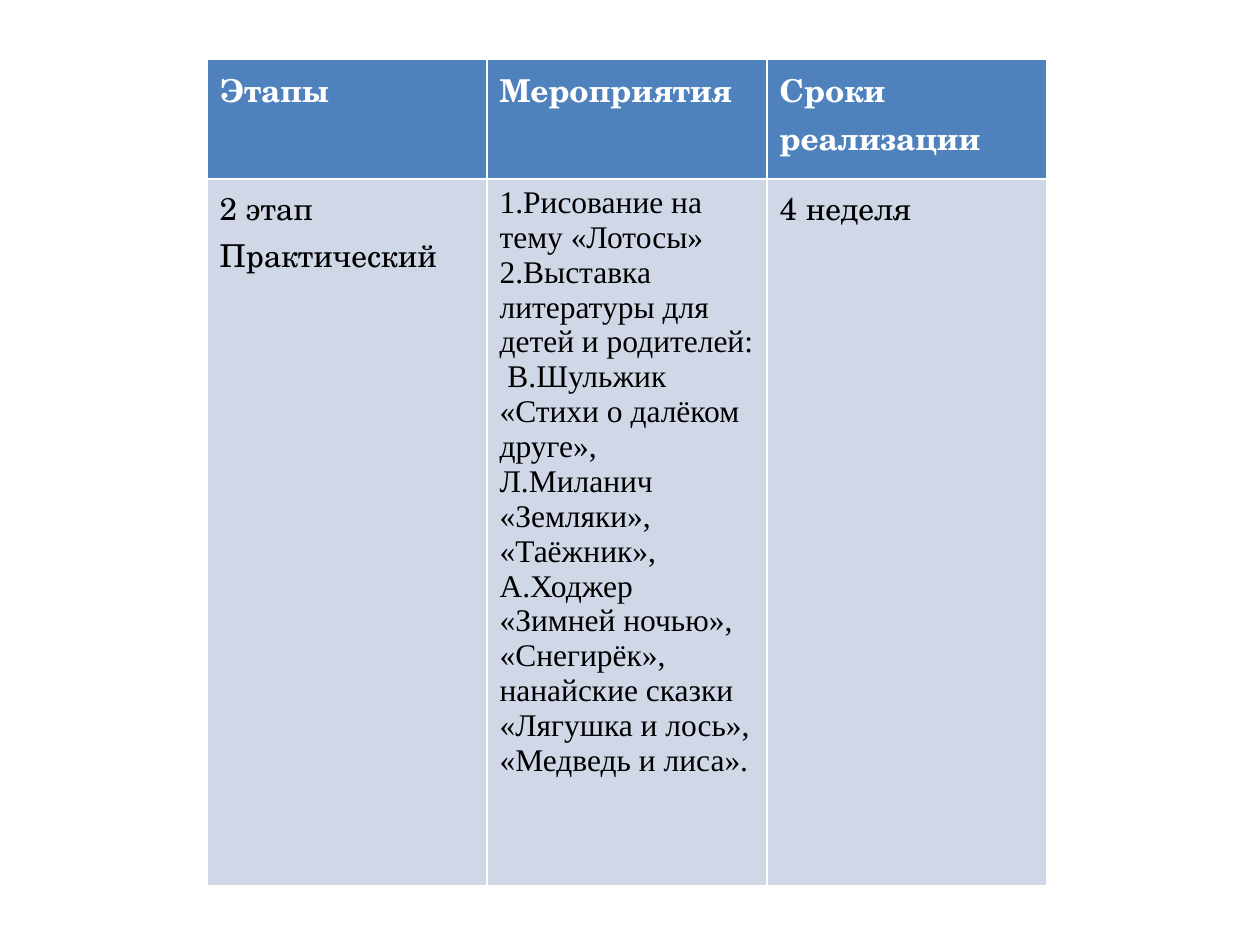
from dataclasses import dataclass

from pptx import Presentation
from pptx.dml.color import RGBColor as Rgb
from pptx.table import _Cell as Cell
from pptx.util import Emu, Pt

EMU_PER_PX = 914400 / 126


@dataclass(frozen=True)
class Theme:
    header_fill: str = "4F81BD"
    body_fill: str = "D0D8E8"
    header_ink: str = "FFFFFF"
    body_ink: str = "000000"
    school_font: str = "TeX Gyre Schola"
    list_font: str = "Times New Roman"
    size: int = 18


@dataclass(frozen=True)
class Line:
    text: str
    hanging: int = 0


@dataclass(frozen=True)
class Entry:
    lines: tuple[Line, ...]
    font: str
    fill: str
    ink: str
    bold: bool = False


THEME = Theme()


def px(length: int) -> Emu:
    """Turn px into EMU."""
    return Emu(round(length * EMU_PER_PX))


def header(title: str) -> Entry:
    """Describe a column heading."""
    return Entry((Line(title),), THEME.school_font, THEME.header_fill, THEME.header_ink, True)


def body(*lines: Line, font: str = THEME.school_font) -> Entry:
    """Describe a cell below the headings."""
    return Entry(lines, font, THEME.body_fill, THEME.body_ink)


STAGE_PLAN = (
    (header("Этапы"), header("Мероприятия"), header("Сроки реализации")),
    (
        body(Line("2 этап"), Line("Практический")),
        body(
            Line("1.Рисование на", hanging=48),
            Line("тему «Лотосы»", hanging=48),
            Line(
                "2.Выставка литературы для детей и родителей:  В.Шульжик "
                "«Стихи о далёком друге», Л.Миланич «Земляки», «Таёжник», "
                "А.Ходжер «Зимней ночью», «Снегирёк», нанайские сказки "
                "«Лягушка и лось», «Медведь и лиса»."
            ),
            font=THEME.list_font,
        ),
        body(Line("4 неделя")),
    ),
)
ROW_HEIGHTS = (120, 707)
COLUMN_WIDTH = 280


def write(paragraph, text: str, *, font: str, ink: str, bold: bool, hanging: int) -> None:
    """Put formatted text into a paragraph."""
    if hanging:
        properties = paragraph._p.get_or_add_pPr()
        properties.set("marL", str(px(hanging)))
        properties.set("indent", str(px(-hanging)))
    run = paragraph.add_run()
    run.text = text
    run.font.name = font
    run.font.size = Pt(THEME.size)
    run.font.bold = bold
    run.font.color.rgb = Rgb.from_string(ink)


def fill_cell(cell: Cell, entry: Entry) -> None:
    """Colour a cell and write its lines."""
    cell.fill.solid()
    cell.fill.fore_color.rgb = Rgb.from_string(entry.fill)
    frame = cell.text_frame
    for index, line in enumerate(entry.lines):
        paragraph = frame.add_paragraph() if index else frame.paragraphs[0]
        write(paragraph, line.text, font=entry.font, ink=entry.ink,
              bold=entry.bold, hanging=line.hanging)


def main() -> None:
    """Build the slide with the stage plan."""
    deck = Presentation()
    deck.slide_width, deck.slide_height = px(1260), px(945)
    slide = deck.slides.add_slide(deck.slide_layouts[6])
    columns = len(STAGE_PLAN[0])
    plan = slide.shapes.add_table(
        len(STAGE_PLAN), columns, px(207), px(59),
        px(columns * COLUMN_WIDTH), px(sum(ROW_HEIGHTS)),
    ).table
    for row, height, entries in zip(plan.rows, ROW_HEIGHTS, STAGE_PLAN):
        row.height = px(height)
        for cell, entry in zip(row.cells, entries):
            fill_cell(cell, entry)
    deck.save("out.pptx")


if __name__ == "__main__":
    main()
